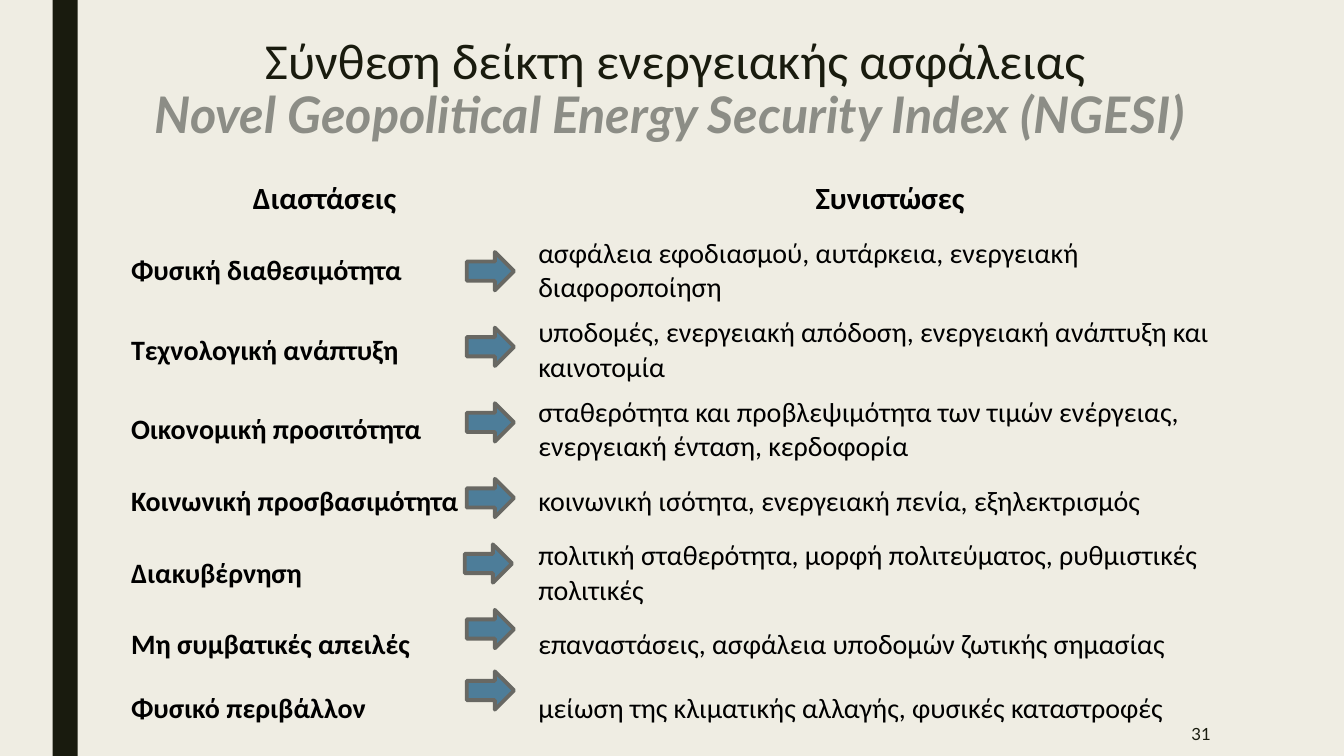
from pptx import Presentation
from pptx.dml.color import RGBColor
from pptx.enum.shapes import MSO_SHAPE
from pptx.enum.text import MSO_ANCHOR, PP_ALIGN
from pptx.util import Pt

RECT, ARROW = MSO_SHAPE.RECTANGLE, MSO_SHAPE.RIGHT_ARROW
TOP, MIDDLE = MSO_ANCHOR.TOP, MSO_ANCHOR.MIDDLE
LEFT, CENTER, RIGHT = PP_ALIGN.LEFT, PP_ALIGN.CENTER, PP_ALIGN.RIGHT
NO_GRID = "{2D5ABB26-0587-4C30-8999-92F81FD0307C}"
COLORS = {"bg": "EFEDE3", "dark": "191B0E", "gray": "8C8D86",
          "text": "000000", "arrow": "4D7D99", "edge": "686863"}
ROWS = [
    ("Διαστάσεις", "Συνιστώσες"),
    ("Φυσική διαθεσιμότητα", "ασφάλεια εφοδιασμού, αυτάρκεια, ενεργειακή διαφοροποίηση"),
    ("Τεχνολογική ανάπτυξη", "υποδομές, ενεργειακή απόδοση, ενεργειακή ανάπτυξη και καινοτομία"),
    ("Οικονομική προσιτότητα", "σταθερότητα και προβλεψιμότητα των τιμών ενέργειας, ενεργειακή ένταση, κερδοφορία"),
    ("Κοινωνική προσβασιμότητα", "κοινωνική ισότητα, ενεργειακή πενία, εξηλεκτρισμός"),
    ("Διακυβέρνηση", "πολιτική σταθερότητα, μορφή πολιτεύματος, ρυθμιστικές πολιτικές"),
    ("Μη συμβατικές απειλές", "επαναστάσεις, ασφάλεια υποδομών ζωτικής σημασίας"),
    ("Φυσικό περιβάλλον", "μείωση της κλιματικής αλλαγής, φυσικές καταστροφές"),
]
ROW_HEIGHTS = [45.4, 57, 57, 57, 45.4, 57, 45.4, 45.4]
ARROW_SPOTS = [(333.4, 180), (333.4, 234), (333.4, 288), (333.4, 342),
               (332, 388.8), (333.4, 435.6), (333.4, 479.5)]


def style(r, size, font, color, bold=False, italic=False):
    r.font.size, r.font.name = Pt(size), font
    r.font.bold, r.font.italic = bold, italic
    r.font.color.rgb = RGBColor.from_string(COLORS[color])


def add_text(text, x, y, w, h, anchor, align):
    tf = s.shapes.add_textbox(Pt(x), Pt(y), Pt(w), Pt(h)).text_frame
    tf.word_wrap = True
    tf.vertical_anchor = anchor
    tf.text = text
    p = tf.paragraphs[0]
    p.alignment = align
    return p


prs = Presentation()
prs.slide_width, prs.slide_height = Pt(960), Pt(540)
s = prs.slides.add_slide(prs.slide_layouts[6])
s.background.fill.solid()
s.background.fill.fore_color.rgb = RGBColor.from_string(COLORS["bg"])

bar = s.shapes.add_shape(RECT, Pt(37.5), Pt(0), Pt(18), Pt(540))
bar.shadow.inherit = False
bar.fill.solid()
bar.fill.fore_color.rgb = RGBColor.from_string(COLORS["dark"])
bar.line.fill.background()

p = add_text("Σύνθεση δείκτη ενεργειακής ασφάλειας\v"
             "Novel Geopolitical Energy Security Index (NGESI) ",
             86.4, 22.3, 792, 97.2, TOP, CENTER)
p.line_spacing = 0.89
style(p.runs[0], 36, "Calibri", "dark")
style(p.runs[1], 36, "Lato", "gray", True, True)

frame = s.shapes.add_table(len(ROWS), 2, Pt(86.4), Pt(119.5), Pt(807.8), Pt(sum(ROW_HEIGHTS)))
table = frame.table
table._tbl.tblPr[0].text = NO_GRID
table.first_row = table.horz_banding = False
table.columns[0].width, table.columns[1].width = Pt(290.9), Pt(516.9)
for i, (texts, height) in enumerate(zip(ROWS, ROW_HEIGHTS)):
    table.rows[i].height = Pt(height)
    for j, text in enumerate(texts):
        cell = table.cell(i, j)
        cell.fill.background()
        cell.vertical_anchor = MIDDLE
        p = cell.text_frame.paragraphs[0]
        p.text = text
        p.alignment = CENTER if i == 0 else LEFT
        style(p.runs[0], 22 if i == 0 else 20, "Calibri", "text", i == 0 or j == 0)

p = add_text("31", 745.9, 508.3, 126, 31.7, MIDDLE, RIGHT)
style(p.runs[0], 12, "Lato", "dark")

for x, y in ARROW_SPOTS:
    sp = s.shapes.add_shape(ARROW, Pt(x), Pt(y), Pt(33.8), Pt(27.4))
    sp.shadow.inherit = False
    sp.fill.solid()
    sp.fill.fore_color.rgb = RGBColor.from_string(COLORS["arrow"])
    sp.line.color.rgb = RGBColor.from_string(COLORS["edge"])
    sp.line.width = Pt(2.75)

prs.save("out.pptx")
